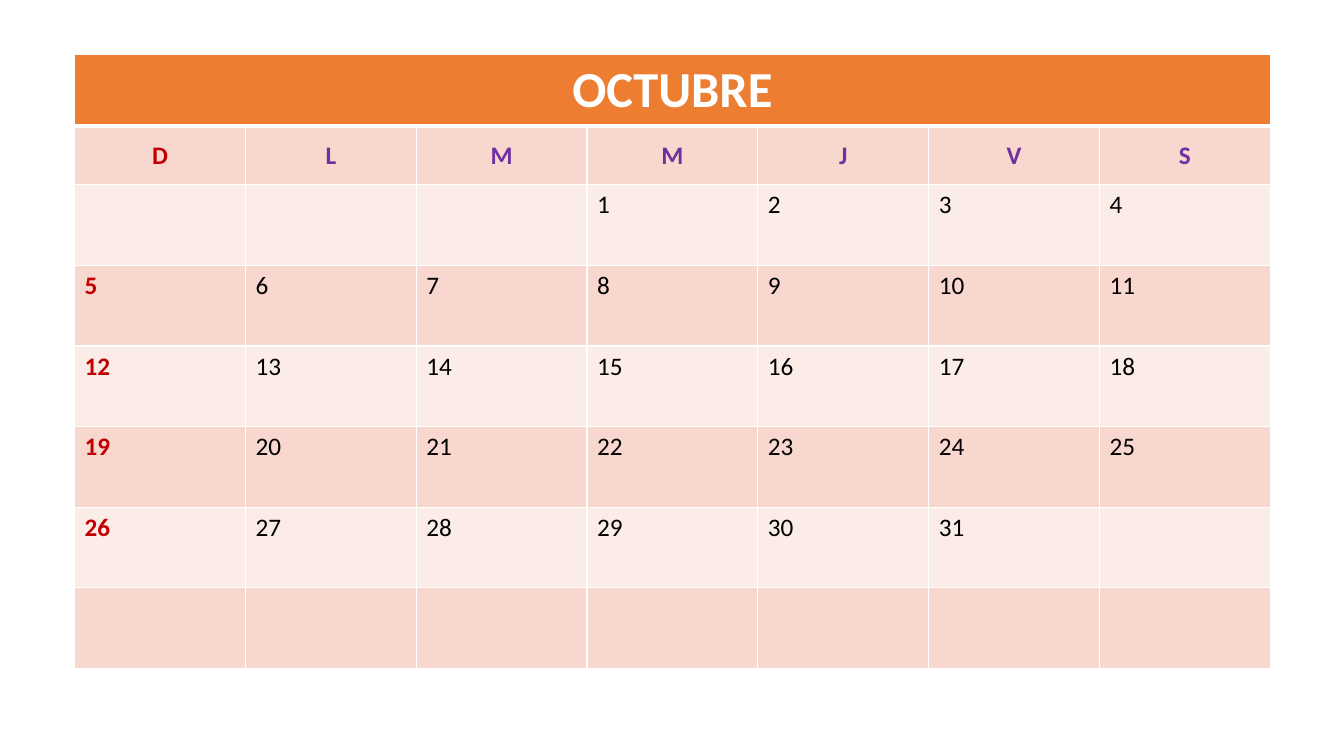
from lxml import etree
from pptx import Presentation
from pptx import util as u
from pptx.dml.color import RGBColor
from pptx.enum import text
from pptx.oxml import ns

WHITE = RGBColor(0xFF, 0xFF, 0xFF)
BLACK = RGBColor(0x00, 0x00, 0x00)
ORANGE = RGBColor(0xED, 0x7D, 0x31)
PEACH = RGBColor(0xF8, 0xD7, 0xCE)
PALE = RGBColor(0xFC, 0xEC, 0xE8)
RED = RGBColor(0xC0, 0x00, 0x00)
PURPLE = RGBColor(0x70, 0x30, 0xA0)

MONTH = "OCTUBRE"
WEEKDAYS = "DLMMJVS"
FIRST_COLUMN = 3
DAYS = 31
ROW_HEIGHTS = [0.69, 0.58] + [0.8] * 6


def write(cell, content, size=18, color=BLACK, bold=False, centered=False):
    p = cell.text_frame.paragraphs[0]
    p.font.size = u.Pt(size)
    if centered:
        p.alignment = text.PP_ALIGN.CENTER
        cell.vertical_anchor = text.MSO_ANCHOR.MIDDLE
    if content:
        r = p.add_run()
        r.text = content
        r.font.name = "Calibri"
        r.font.size = u.Pt(size)
        r.font.bold = bold
        r.font.color.rgb = color


class CalendarSlide:
    def __init__(self, prs):
        self.s = prs.slides.add_slide(prs.slide_layouts[6])
        self.border_color = WHITE

    def borders(self, cell, top=1, bottom=1):
        tc_pr = cell._tc.get_or_add_tcPr()
        for side, width in (("L", 1), ("R", 1), ("T", top), ("B", bottom)):
            line = etree.SubElement(tc_pr, ns.qn(f"a:ln{side}"), w=str(u.Pt(width)))
            fill = etree.SubElement(line, ns.qn("a:solidFill"))
            etree.SubElement(fill, ns.qn("a:srgbClr"), val=str(self.border_color))

    def cell(self, cell, content, fill, top=1, bottom=1, **style):
        self.borders(cell, top, bottom)
        cell.fill.solid()
        cell.fill.fore_color.rgb = fill
        write(cell, content, **style)

    def table(self, left, top, width, heights, columns):
        frame = self.s.shapes.add_table(
            len(heights), columns, u.Inches(left), u.Inches(top),
            u.Inches(width), u.Inches(sum(heights)))
        for row, height in zip(frame.table.rows, heights):
            row.height = u.Inches(height)
        return frame.table

    def calendar(self):
        columns = len(WEEKDAYS)
        table = self.table(0.74, 0.54, 11.86, ROW_HEIGHTS, columns)
        table.cell(0, 0).merge(table.cell(0, columns - 1))
        for column, weekday in enumerate(WEEKDAYS):
            self.cell(table.cell(0, column), "" if column else MONTH, ORANGE,
                      bottom=3, size=36, color=WHITE, bold=True, centered=True)
            sunday = column == 0
            self.cell(table.cell(1, column), weekday, PEACH, top=3,
                      color=RED if sunday else PURPLE, bold=True, centered=True)
            for week in range(len(ROW_HEIGHTS) - 2):
                day = week * columns + column - FIRST_COLUMN + 1
                self.cell(table.cell(week + 2, column),
                          str(day) if 1 <= day <= DAYS else "",
                          PEACH if week % 2 else PALE,
                          color=RED if sunday else BLACK, bold=sunday)


def main():
    prs = Presentation()
    prs.slide_width = u.Inches(13.33)
    prs.slide_height = u.Inches(7.5)
    CalendarSlide(prs).calendar()
    prs.save("out.pptx")


if __name__ == "__main__":
    main()
